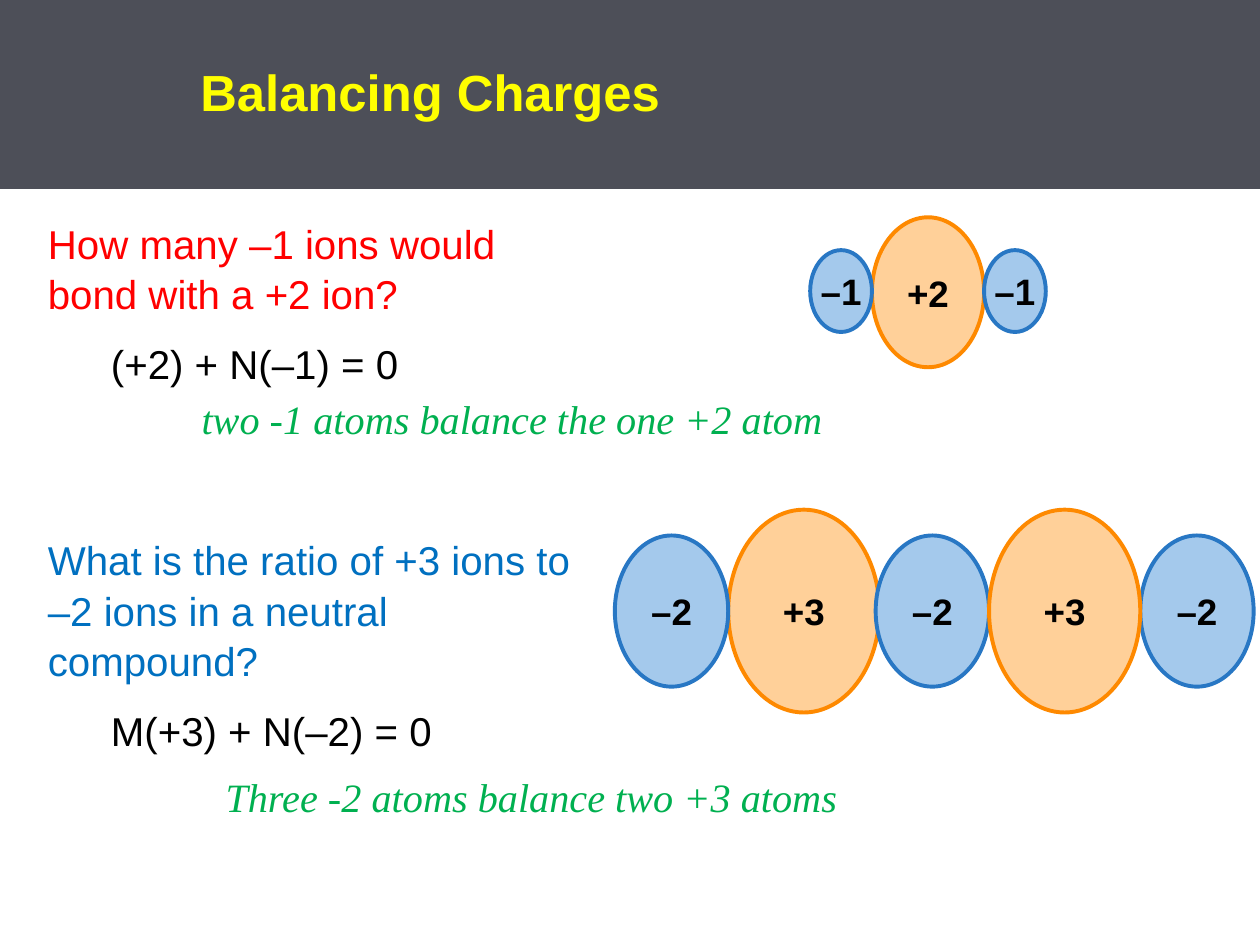
from pptx import Presentation
from pptx.dml.color import RGBColor
from pptx.enum.shapes import MSO_SHAPE
from pptx.enum.text import MSO_ANCHOR, PP_ALIGN
from pptx.util import Inches, Pt

RECTANGLE, OVAL = MSO_SHAPE.RECTANGLE, MSO_SHAPE.OVAL
MIDDLE, CENTER = MSO_ANCHOR.MIDDLE, PP_ALIGN.CENTER
ORANGE, BLUE = ("FFD099", "FE8900"), ("A4C9EC", "2877C4")


def color(value):
    """Return the colour for a hex string."""
    return RGBColor.from_string(value)


def style(p, size, hex_color, font="Arial", bold=False, italic=False):
    """Format every run of a paragraph."""
    for r in p.runs:
        r.font.name, r.font.size = font, Pt(size)
        r.font.bold, r.font.italic = bold, italic
        r.font.color.rgb = color(hex_color)


def set_margins(tf, left=0, top=0, right=0, bottom=0):
    """Set the text frame insets in inches and wrap the text."""
    tf.word_wrap = True
    tf.margin_left, tf.margin_top = Inches(left), Inches(top)
    tf.margin_right, tf.margin_bottom = Inches(right), Inches(bottom)


def add_title(s, text):
    """Add the dark title band."""
    sp = s.shapes.add_shape(RECTANGLE, 0, 0, Inches(10), Inches(1.5))
    sp.shadow.inherit = False
    sp.fill.solid()
    sp.fill.fore_color.rgb = color("4D4F58")
    sp.line.fill.background()
    tf = sp.text_frame
    set_margins(tf, 1.59, 0.15, 0.36, 0.15)
    tf.vertical_anchor = MIDDLE
    p = tf.paragraphs[0]
    p.text, p.alignment, p.line_spacing = text, PP_ALIGN.LEFT, 0.95
    style(p, 29, "FFFF00", bold=True)


def add_question(s, top, height, question, equation, hex_color):
    """Add a coloured question with its indented equation."""
    sp = s.shapes.add_textbox(0, Inches(top), Inches(4.65), Inches(height))
    tf = sp.text_frame
    set_margins(tf, 0.38)
    tf.text = question
    style(tf.paragraphs[0], 23, hex_color)
    p = tf.add_paragraph()
    p.text, p.space_before = equation, Pt(11)
    p._p.get_or_add_pPr().set("marL", str(Inches(0.5)))
    style(p, 23, "000000")
    for p in tf.paragraphs:
        p.line_spacing = 1.05


def add_answer(s, left, top, text):
    """Add an italic answer line."""
    sp = s.shapes.add_textbox(Inches(left), Inches(top), Inches(6.5), Inches(0.49))
    set_margins(sp.text_frame, 0.6, 0.05, 0.1, 0.05)
    sp.text_frame.text = text
    style(sp.text_frame.paragraphs[0], 23, "00B050", "Times New Roman", italic=True)


def add_ion(s, left, middle, width, height, charge, colors):
    """Add an ion centred on a row's middle line."""
    sp = s.shapes.add_shape(OVAL, Inches(left), Inches(middle - height / 2),
                            Inches(width), Inches(height))
    sp.shadow.inherit = False
    sp.fill.solid()
    sp.fill.fore_color.rgb = color(colors[0])
    sp.line.color.rgb, sp.line.width = color(colors[1]), Pt(2.25)
    tf = sp.text_frame
    set_margins(tf)
    tf.word_wrap = False
    tf.vertical_anchor = MIDDLE
    p = tf.paragraphs[0]
    p.text, p.alignment = charge, CENTER
    style(p, 21, "000000", bold=True)


def main():
    """Build and save the slide."""
    prs = Presentation()
    prs.slide_width, prs.slide_height = Inches(10), Inches(7.5)
    s = prs.slides.add_slide(prs.slide_layouts[6])
    add_title(s, "Balancing Charges")
    add_question(s, 1.72, 1.4, "How many –1 ions would bond with a +2 ion?",
                 "(+2) + N(–1) = 0", "FF0000")
    add_question(s, 4.23, 1.8,
                 "What is the ratio of +3 ions to \v–2 ions in a neutral compound?",
                 "M(+3) + N(–2) = 0", "0070C0")
    add_ion(s, 6.92, 2.32, 0.89, 1.19, "+2", ORANGE)
    for left in (6.43, 7.81):
        add_ion(s, left, 2.31, 0.49, 0.65, "–1", BLUE)
    add_ion(s, 5.78, 4.85, 1.2, 1.61, "+3", ORANGE)
    for left in (4.88, 6.95, 9.05):
        add_ion(s, left, 4.85, 0.9, 1.2, "–2", BLUE)
    add_ion(s, 7.85, 4.85, 1.2, 1.61, "+3", ORANGE)
    add_answer(s, 1, 3.08, "two -1 atoms balance the one +2 atom")
    add_answer(s, 1.19, 6.08, "Three -2 atoms balance two +3 atoms")
    prs.save("out.pptx")


if __name__ == "__main__":
    main()
